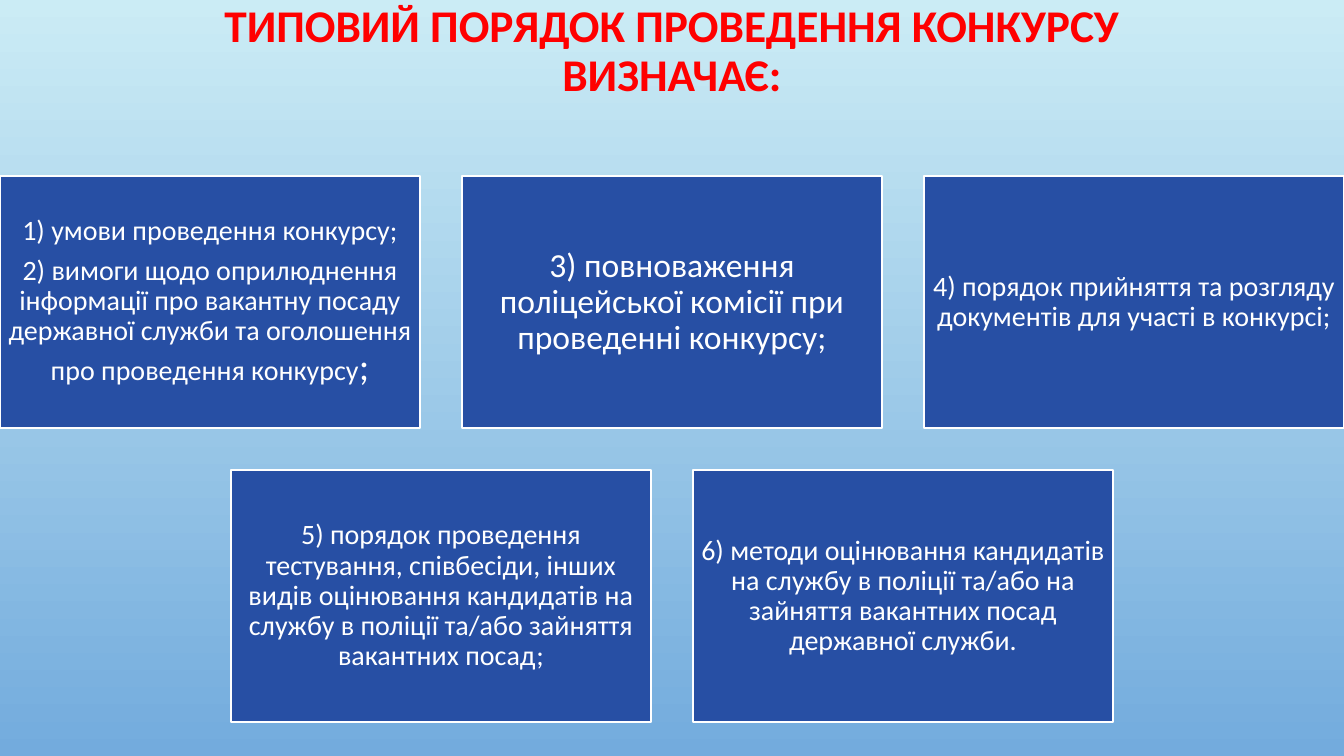
"""Build the slide that lists what the standard competition procedure defines."""
from dataclasses import dataclass

from pptx import Presentation
from pptx.dml.color import RGBColor
from pptx.enum.shapes import MSO_SHAPE
from pptx.enum.text import MSO_ANCHOR, MSO_AUTO_SIZE, PP_ALIGN
from pptx.util import Inches, Pt

RECTANGLE = MSO_SHAPE.RECTANGLE
MIDDLE = MSO_ANCHOR.MIDDLE
NO_AUTOFIT = MSO_AUTO_SIZE.NONE
CENTER = PP_ALIGN.CENTER

COLORS = {
    "sky": "CBECF5",
    "horizon": "73ABDD",
    "title": "FF0000",
    "card": "274FA4",
    "white": "FFFFFF",
}
PAGE_WIDTH, PAGE_HEIGHT = Inches(13.333), Inches(7.5)
CARD_WIDTH = PAGE_WIDTH / 3.2
CARD_HEIGHT = CARD_WIDTH * 0.6
CARD_GAP = CARD_WIDTH * 0.1
GRID_TOP = Inches(1.75)


@dataclass
class Span:
    text: str
    size: float = 20


@dataclass
class Card:
    column: float
    row: int
    paragraphs: list[list[Span]]
    inset: float = 0.08


CARDS = [
    Card(0, 0, [
        [Span("1) умови проведення конкурсу;")],
        [Span("2) вимоги щодо оприлюднення інформації про вакантну посаду "
              "державної служби та оголошення про проведення конкурсу"),
         Span(";", 28)],
    ]),
    Card(1, 0, [[Span("3) повноваження поліцейської комісії при проведенні "
                      "конкурсу;", 24)]], inset=0.1),
    Card(2, 0, [[Span("4) порядок прийняття та розгляду документів для участі "
                      "в конкурсі;")]]),
    Card(0.5, 1, [[Span("5) порядок проведення тестування, співбесіди, інших "
                        "видів оцінювання кандидатів на службу в поліції "
                        "та/або зайняття вакантних посад;")]]),
    Card(1.5, 1, [[Span("6) методи оцінювання кандидатів на службу в поліції "
                        "та/або на зайняття вакантних посад державної "
                        "служби.")]]),
]


def color(name: str) -> RGBColor:
    """Return the named colour."""
    return RGBColor.from_string(COLORS[name])


def apply(target, **values) -> None:
    """Set each given attribute on the target."""
    for name, value in values.items():
        setattr(target, name, value)


def write(frame, paragraphs: list[list[Span]], inset: float,
          color_name: str, bold: bool = False) -> None:
    """Fill a text frame with centred paragraphs."""
    margin = Inches(inset)
    apply(frame, word_wrap=True, auto_size=NO_AUTOFIT, vertical_anchor=MIDDLE,
          margin_left=margin, margin_right=margin,
          margin_top=Inches(0.08), margin_bottom=Inches(0.08))
    for index, spans in enumerate(paragraphs):
        para = frame.add_paragraph() if index else frame.paragraphs[0]
        apply(para, alignment=CENTER, line_spacing=0.9, space_before=Pt(0),
              space_after=Pt(7))
        for span in spans:
            run = para.add_run()
            run.text = span.text
            apply(run.font, name="Calibri", size=Pt(span.size), bold=bold)
            run.font.color.rgb = color(color_name)


def paint_background(page) -> None:
    """Paint a vertical gradient behind the page."""
    fill = page.background.fill
    fill.gradient()
    fill.gradient_angle = 270
    for stop, name, position in zip(fill.gradient_stops, ("sky", "horizon"), (0, 1)):
        stop.color.rgb = color(name)
        stop.position = position


def add_title(page, text: str) -> None:
    """Place and format the title."""
    title = page.shapes.title
    apply(title, left=int(PAGE_WIDTH * 0.075), top=0,
          width=int(PAGE_WIDTH * 0.85), height=Inches(1.04))
    write(title.text_frame, [[Span(text, 32.4)]], 0.3, "title", bold=True)


def add_card(page, card: Card) -> None:
    """Draw one card at its place in the grid."""
    left = card.column * (CARD_WIDTH + CARD_GAP)
    top = GRID_TOP + card.row * (CARD_HEIGHT + CARD_GAP)
    box = page.shapes.add_shape(RECTANGLE, int(left), int(top),
                                int(CARD_WIDTH), int(CARD_HEIGHT))
    box.shadow.inherit = False
    box.fill.solid()
    box.fill.fore_color.rgb = color("card")
    box.line.color.rgb = color("white")
    box.line.width = Pt(1.25)
    write(box.text_frame, card.paragraphs, card.inset, "white")


def main() -> None:
    """Create the deck and save it."""
    deck = Presentation()
    apply(deck, slide_width=PAGE_WIDTH, slide_height=PAGE_HEIGHT)
    page = deck.slides.add_slide(deck.slide_layouts.get_by_name("Title Only"))
    paint_background(page)
    add_title(page, "ТИПОВИЙ ПОРЯДОК ПРОВЕДЕННЯ КОНКУРСУ ВИЗНАЧАЄ:")
    for card in CARDS:
        add_card(page, card)
    deck.save("out.pptx")


if __name__ == "__main__":
    main()
